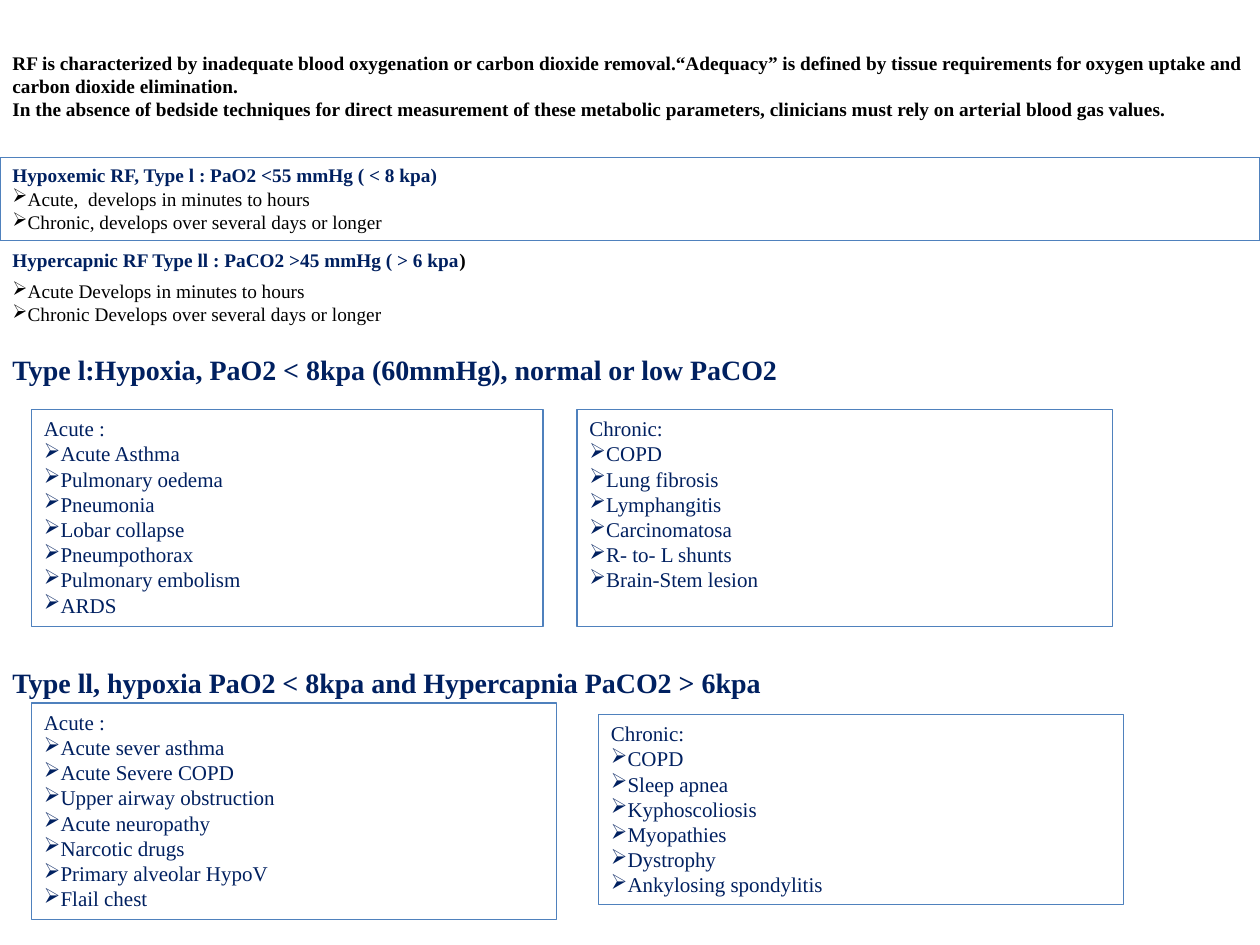
from dataclasses import dataclass

from lxml.etree import SubElement
from pptx import Presentation
from pptx.dml.color import RGBColor
from pptx.enum.shapes import MSO_SHAPE
from pptx.enum.text import MSO_ANCHOR, MSO_AUTO_SIZE, PP_ALIGN
from pptx.oxml.ns import qn
from pptx.util import Emu, Pt

PX = 9144  # EMU per px, 100 px to the inch


@dataclass(frozen=True)
class Theme:
    font: str = "Times New Roman"
    ink: RGBColor = RGBColor(0, 0, 0)
    navy: RGBColor = RGBColor(0x00, 0x20, 0x60)
    border: RGBColor = RGBColor(0x4F, 0x81, 0xBD)
    border_width: float = 0.75
    body: int = 11
    items: int = 12
    heading: int = 16


THEME = Theme()


@dataclass(frozen=True)
class Box:
    x: int
    y: int
    w: int
    h: int

    def inner(self, x, y, w, h):
        """Box whose place is given relative to this one."""
        return Box(self.x + x, self.y + y, w, h)

    def emu(self):
        return [Emu(v * PX) for v in (self.x, self.y, self.w, self.h)]


def add_frame(slide, box, bordered=False):
    if bordered:
        s = slide.shapes.add_shape(MSO_SHAPE.RECTANGLE, *box.emu())
        s.shadow.inherit = False
        s.fill.background()
        s.line.color.rgb = THEME.border
        s.line.width = Pt(THEME.border_width)
    else:
        s = slide.shapes.add_textbox(*box.emu())
    tf = s.text_frame
    tf.word_wrap = True
    tf.auto_size = MSO_AUTO_SIZE.SHAPE_TO_FIT_TEXT
    tf.vertical_anchor = MSO_ANCHOR.TOP
    return tf


def style_run(r, size, color, bold):
    r.font.name = THEME.font
    r.font.size = Pt(size)
    r.font.color.rgb = color
    r.font.bold = bold


def add_lines(tf, lines, size, color, bold=False, bullet=False):
    """Append paragraphs, filling the empty first one of a new frame."""
    for line in lines:
        p = tf.paragraphs[0] if not tf.text else tf.add_paragraph()
        p.text = line
        p.alignment = PP_ALIGN.LEFT
        style_run(p.runs[0], size, color, bold)
        if bullet:
            SubElement(p._p.get_or_add_pPr(), qn("a:buChar")).set("char", "➢")


def add_intro(slide, box):
    add_lines(add_frame(slide, box), [
        "RF is characterized by inadequate blood oxygenation or carbon dioxide "
        "removal.“Adequacy” is defined by tissue requirements for oxygen uptake "
        "and carbon dioxide elimination.",
        "In the absence of bedside techniques for direct measurement of these "
        "metabolic parameters, clinicians must rely on arterial blood gas values.",
    ], THEME.body, THEME.ink, bold=True)


def add_definitions(slide, box):
    tf = add_frame(slide, box.inner(0, 0, box.w, 66), bordered=True)
    add_lines(tf, ["Hypoxemic RF, Type l : PaO2 <55 mmHg ( < 8 kpa)"],
              THEME.body, THEME.navy, bold=True)
    add_lines(tf, ["Acute,  develops in minutes to hours",
                   "Chronic, develops over several days or longer"],
              THEME.body, THEME.ink, bullet=True)

    tf = add_frame(slide, box.inner(0, 67, box.w, 29))
    add_lines(tf, ["Hypercapnic RF Type ll : PaCO2 >45 mmHg ( > 6 kpa"],
              THEME.body, THEME.navy, bold=True)
    r = tf.paragraphs[0].add_run()
    r.text = ")"
    style_run(r, THEME.body, THEME.ink, True)

    tf = add_frame(slide, box.inner(0, 92, box.w, 47))
    add_lines(tf, ["Acute Develops in minutes to hours",
                   "Chronic Develops over several days or longer"],
              THEME.body, THEME.ink, bullet=True)


def add_causes(slide, box, heading, lists):
    """Heading over bordered lists, each given as (place, title, items)."""
    tf = add_frame(slide, box.inner(0, 0, box.w, 37))
    add_lines(tf, [heading], THEME.heading, THEME.navy, bold=True)
    for place, title, items in lists:
        tf = add_frame(slide, box.inner(*place), bordered=True)
        add_lines(tf, [title], THEME.items, THEME.navy)
        add_lines(tf, items, THEME.items, THEME.navy, bullet=True)


TYPE_ONE = [
    ((25, 50, 406, 172), "Acute :",
     ["Acute Asthma", "Pulmonary oedema", "Pneumonia", "Lobar collapse",
      "Pneumpothorax", "Pulmonary embolism", "ARDS"]),
    ((458, 50, 425, 172), "Chronic:",
     ["COPD", "Lung fibrosis", "Lymphangitis", "Carcinomatosa",
      "R- to- L shunts", "Brain-Stem lesion"]),
]
TYPE_TWO = [
    ((25, 35, 417, 172), "Acute :",
     ["Acute sever asthma", "Acute Severe COPD", "Upper airway obstruction",
      "Acute neuropathy", "Narcotic drugs", "Primary alveolar HypoV",
      "Flail chest"]),
    ((475, 44, 417, 151), "Chronic:",
     ["COPD", "Sleep apnea", "Kyphoscoliosis", "Myopathies", "Dystrophy",
      "Ankylosing spondylitis"]),
]


def main():
    prs = Presentation()
    prs.slide_width, prs.slide_height = Emu(1000 * PX), Emu(750 * PX)
    slide = prs.slides.add_slide(prs.slide_layouts[6])
    add_intro(slide, Box(0, 36, 1000, 66))
    add_definitions(slide, Box(0, 125, 1000, 139))
    add_causes(slide, Box(0, 275, 1000, 222),
               "Type l:Hypoxia, PaO2 < 8kpa (60mmHg), normal or low PaCO2",
               TYPE_ONE)
    add_causes(slide, Box(0, 523, 1000, 207),
               "Type ll, hypoxia PaO2 < 8kpa and Hypercapnia PaCO2 > 6kpa",
               TYPE_TWO)
    prs.save("out.pptx")


if __name__ == "__main__":
    main()
